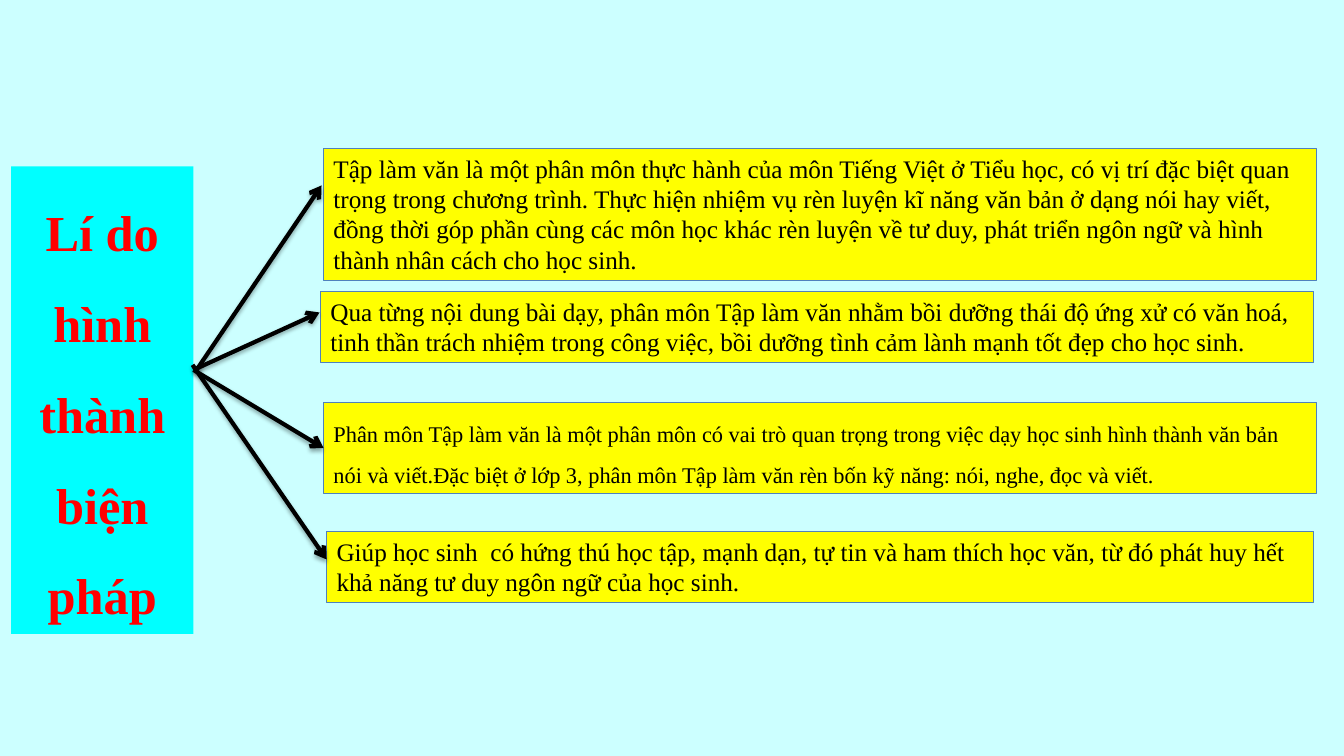
import pptx
import pptx.dml.color
import pptx.enum.shapes
import pptx.enum.text
import pptx.oxml
import pptx.oxml.ns
import pptx.util

Pt = pptx.util.Pt
FONT = "Times New Roman"
TITLE = ("Lí do hình thành biện pháp", (7.92, 118.8, 130.32, 334.08))
REASONS = [
    ("Tập làm văn là một phân môn thực hành của môn Tiếng Việt ở Tiểu học, có vị trí đặc biệt quan "
     "trọng trong chương trình. Thực hiện nhiệm vụ rèn luyện kĩ năng văn bản ở dạng nói hay viết, "
     "đồng thời góp phần cùng các môn học khác rèn luyện về tư duy, phát triển ngôn ngữ và hình "
     "thành nhân cách cho học sinh.", (231.12, 105.84, 709.2, 94.32), 18, 1),
    ("Qua từng nội dung bài dạy, phân môn Tập làm văn nhằm bồi dưỡng thái độ ứng xử có văn hoá, "
     "tinh thần trách nhiệm trong công việc, bồi dưỡng tình cảm lành mạnh tốt đẹp cho học sinh.",
     (228.96, 208.08, 709.2, 51.12), 18, 1),
    ("Phân môn Tập làm văn là một phân môn có vai trò quan trọng trong việc dạy học sinh hình thành "
     "văn bản nói và viết.Đặc biệt ở lớp 3, phân môn Tập làm văn rèn bốn kỹ năng: nói, nghe, đọc và viết.",
     (231.12, 287.28, 709.2, 65.52), 16, 1.5),
    ("Giúp học sinh  có hứng thú học tập, mạnh dạn, tự tin và ham thích học văn, từ đó phát huy hết "
     "khả năng tư duy ngôn ngữ của học sinh.", (233.28, 379.44, 704.88, 51.12), 18, 1),
]
ARROWS = [
    ((140.4, 264.24), (229.68, 132.48)),
    ((138.24, 264.24), (228.24, 223.2)),
    ((138.24, 264.24), (231.12, 320.04)),
    ((137.52, 260.64), (233.28, 399.6)),
]
SHADOW = (
    '<a:effectLst %s><a:outerShdw blurRad="%d" dist="%d" dir="5400000" rotWithShape="0">'
    '<a:srgbClr val="000000"><a:alpha val="35000"/></a:srgbClr></a:outerShdw></a:effectLst>'
    % (pptx.oxml.ns.nsdecls("a"), Pt(3.1), Pt(1.8)))
ARROWHEAD = '<a:tailEnd %s type="arrow"/>' % pptx.oxml.ns.nsdecls("a")


def rgb(value):
    return pptx.dml.color.RGBColor.from_string(value)


def add_box(slide, text, box, size, spacing, fill, color):
    sp = slide.shapes.add_textbox(*map(Pt, box))
    sp.fill.solid()
    sp.fill.fore_color.rgb = rgb(fill)
    tf = sp.text_frame
    tf.word_wrap = True
    tf.auto_size = pptx.enum.text.MSO_AUTO_SIZE.SHAPE_TO_FIT_TEXT
    p = tf.paragraphs[0]
    p.text = text
    p.line_spacing = float(spacing)
    p.font.name = FONT
    p.font.size = Pt(size)
    p.font.color.rgb = rgb(color)
    return sp


def add_arrow(slide, start, end):
    line = slide.shapes.add_connector(
        pptx.enum.shapes.MSO_CONNECTOR.STRAIGHT, *map(Pt, start + end))
    line.line.color.rgb = rgb("000000")
    line.line.width = Pt(3)
    spPr = line.element.spPr
    spPr.get_or_add_ln().append(pptx.oxml.parse_xml(ARROWHEAD))
    spPr.append(pptx.oxml.parse_xml(SHADOW))
    return line


def main():
    prs = pptx.Presentation()
    prs.slide_width, prs.slide_height = Pt(960), Pt(540)
    slide = prs.slides.add_slide(prs.slide_layouts[6])
    slide.background.fill.solid()
    slide.background.fill.fore_color.rgb = rgb("CCFFFF")

    reasons = []
    for text, box, size, spacing in REASONS:
        sp = add_box(slide, text, box, size, spacing, "FFFF00", "000000")
        sp.line.color.rgb = rgb("4F81BD")
        sp.line.width = Pt(0.75)
        reasons.append(sp)

    title = add_box(slide, *TITLE, 36, 1.5, "00FFFF", "FF0000")
    p = title.text_frame.paragraphs[0]
    p.font.bold = True
    p.alignment = pptx.enum.text.PP_ALIGN.CENTER

    arrows = [add_arrow(slide, start, end) for start, end in ARROWS]
    arrows[2].end_connect(reasons[2], 1)
    prs.save("out.pptx")


if __name__ == "__main__":
    main()
